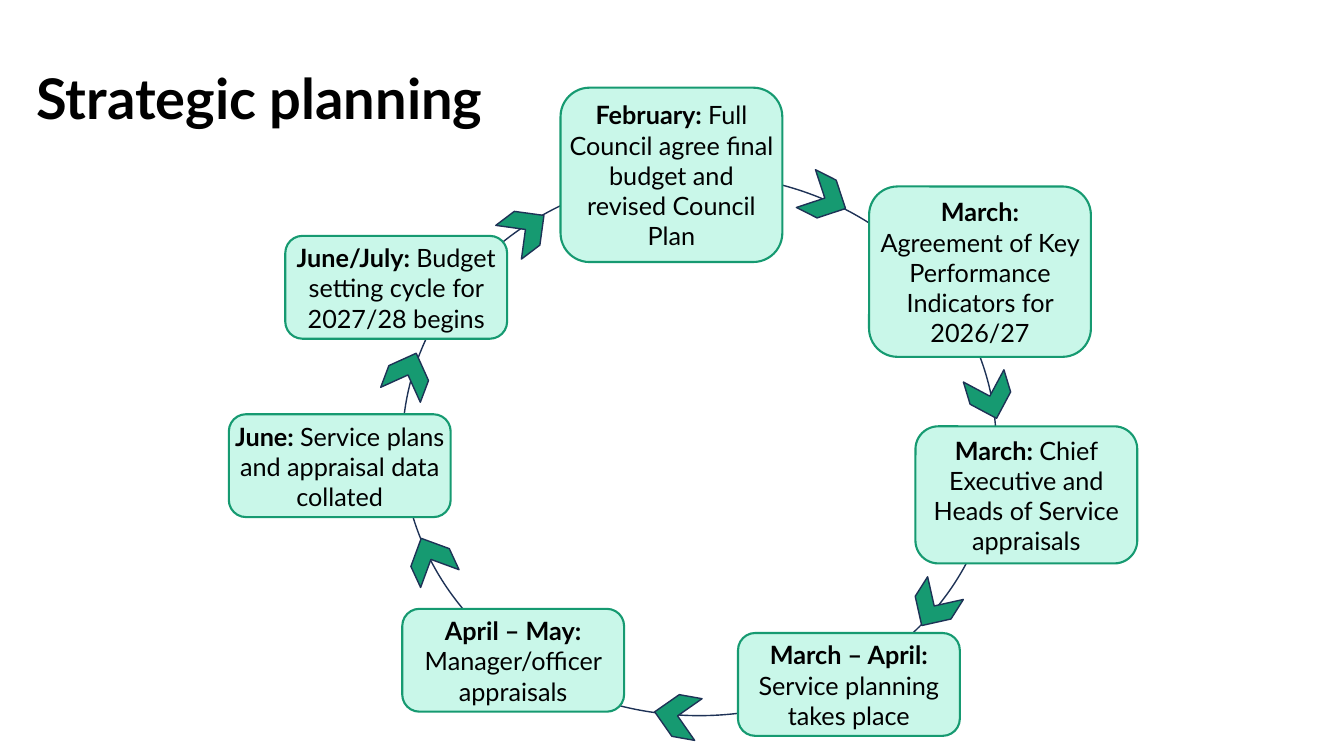
from dataclasses import dataclass

from pptx import Presentation
from pptx.dml.color import RGBColor
from pptx.enum.shapes import MSO_SHAPE as Shape
from pptx.enum.text import MSO_ANCHOR as Anchor, MSO_AUTO_SIZE as AutoSize, PP_ALIGN as Align
from pptx.util import Inches, Pt

TITLE = "Strategic planning"

# Clockwise: month, activity, left, top, height of the box
STAGES = [
    ("February: ", "Full Council agree final budget and revised Council Plan", 5.56, 0.87, 1.73),
    ("March: ", "Agreement of Key Performance Indicators for 2026/27", 8.62, 1.85, 1.69),
    ("March: ", "Chief Executive and Heads of Service appraisals", 9.08, 4.23, 1.36),
    ("March – April: ", "Service planning takes place", 7.32, 6.28, 1.02),
    ("April – May: ", "Manager/officer appraisals", 3.99, 6.04, 1.02),
    ("June: ", "Service plans and appraisal data collated", 2.27, 4.11, 1.02),
    ("June/July: ", "Budget setting cycle for 2027/28 begins", 2.83, 2.34, 1.02),
]

# Clockwise: left, top, rotation of the arrow after each stage
ARROWS = [
    (7.97, 1.76, 26.8),
    (9.6, 3.73, 73.1),
    (9.04, 5.81, 122.4),
    (6.49, 6.89, 190.1),
    (4.05, 5.33, 245.2),
    (3.83, 3.5, 290.7),
    (5, 2.06, 322.8),
]

RING = (3.99, 1.73, 5.89, 5.37)
TITLE_BOX = (0.26, 0.28, 11.83, 1.45)
STAGE_WIDTH = 2.2
ARROW_SIZE = (0.44, 0.42)


@dataclass(frozen=True)
class Theme:
    font: str = "Lato"
    text: str = "000000"
    mint: str = "C9F7E9"
    green: str = "169A71"
    navy: str = "1E3256"
    title_size: int = 40
    body_size: int = 18
    thin: float = 1
    thick: float = 1.5


THEME = Theme()


def add_run(p, text, size=THEME.body_size, bold=False, color=THEME.text):
    r = p.add_run()
    r.text = text
    r.font.name = THEME.font
    r.font.size = Pt(size)
    r.font.bold = bold
    r.font.color.rgb = RGBColor.from_string(color)


def add_shape(slide, kind, box, line, width, fill=None):
    sp = slide.shapes.add_shape(kind, *map(Inches, box))
    sp.shadow.inherit = False
    if fill:
        sp.fill.solid()
        sp.fill.fore_color.rgb = RGBColor.from_string(fill)
    else:
        sp.fill.background()
    sp.line.color.rgb = RGBColor.from_string(line)
    sp.line.width = Pt(width)
    return sp


def add_title(slide):
    title = slide.shapes.title
    title.left, title.top, title.width, title.height = map(Inches, TITLE_BOX)
    tf = title.text_frame
    tf.auto_size = AutoSize.NONE
    tf.vertical_anchor = Anchor.MIDDLE
    p = tf.paragraphs[0]
    p.alignment = Align.LEFT
    p.line_spacing = 0.9
    add_run(p, TITLE, size=THEME.title_size, bold=True)


def add_stage(slide, month, activity, left, top, height):
    sp = add_shape(slide, Shape.ROUNDED_RECTANGLE, (left, top, STAGE_WIDTH, height),
                   THEME.green, THEME.thick, fill=THEME.mint)
    tf = sp.text_frame
    tf.word_wrap = True
    tf.auto_size = AutoSize.SHAPE_TO_FIT_TEXT
    tf.vertical_anchor = Anchor.MIDDLE
    tf.margin_left = tf.margin_right = tf.margin_bottom = 0
    tf.margin_top = Inches(0.01)
    p = tf.paragraphs[0]
    p.alignment = Align.CENTER
    add_run(p, month, bold=True)
    add_run(p, activity)


def main():
    prs = Presentation()
    prs.slide_width, prs.slide_height = Inches(13.33), Inches(7.5)
    slide = prs.slides.add_slide(prs.slide_layouts[5])
    add_title(slide)
    add_shape(slide, Shape.OVAL, RING, THEME.navy, THEME.thin)
    for stage in STAGES:
        add_stage(slide, *stage)
    for left, top, rotation in ARROWS:
        arrow = add_shape(slide, Shape.CHEVRON, (left, top, *ARROW_SIZE),
                          THEME.navy, THEME.thin, fill=THEME.green)
        arrow.rotation = rotation
    prs.save("out.pptx")


if __name__ == "__main__":
    main()
